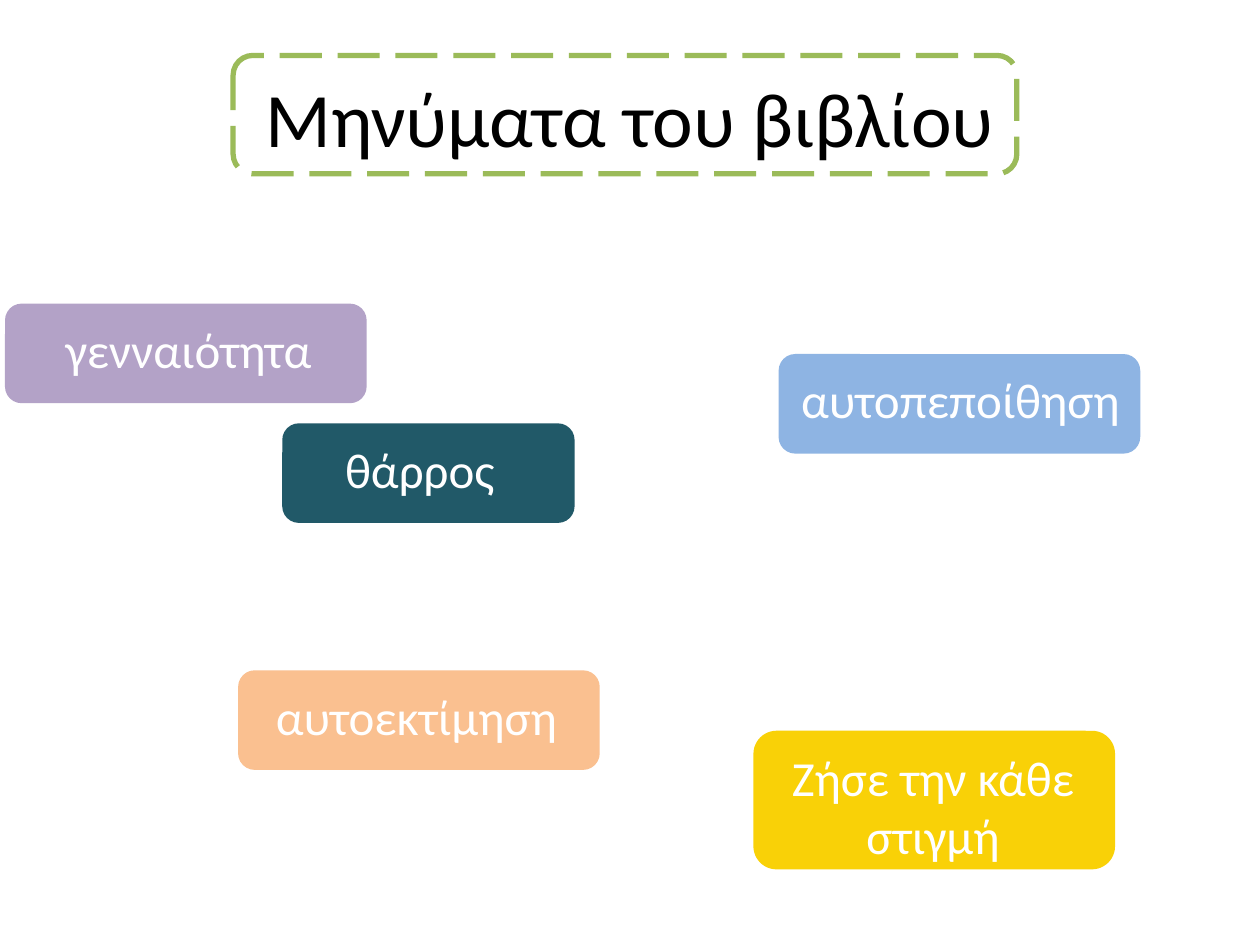
from pptx import Presentation
from pptx.dml.color import RGBColor
from pptx.enum.dml import MSO_LINE
from pptx.enum.shapes import MSO_SHAPE
from pptx.enum.text import MSO_ANCHOR, MSO_AUTO_SIZE, PP_ALIGN
from pptx.util import Inches, Pt

deck = Presentation()
deck.slide_width, deck.slide_height = Inches(10), Inches(7.5)
column, row = deck.slide_width / 100, deck.slide_height / 75
page = deck.slides.add_slide(deck.slide_layouts[5])


def place(left, top, width, height):
    return [int(left * column), int(top * row), int(width * column), int(height * row)]


def write(box, text, size=28, color="FFFFFF", align=PP_ALIGN.LEFT, anchor=MSO_ANCHOR.TOP):
    frame = box.text_frame
    frame.word_wrap = True
    frame.vertical_anchor = anchor
    para = frame.paragraphs[0]
    para.alignment = align
    span = para.add_run()
    span.text = text
    span.font.name = "Calibri"
    span.font.size = Pt(size)
    span.font.color.rgb = RGBColor.from_string(color)


card_width, card_height, line_height = 28.7, 7.9, 5.7
messages = [
    ("Ζήσε την κάθε στιγμή", "F9D107", (59.8, 58, card_width, 11),
     (58.7, 58.8, 30.7, 10.4), PP_ALIGN.CENTER),
    ("αυτοεκτίμηση", "FAC090", (18.9, 53.2, card_width, card_height),
     (20.9, 54, 25.2, line_height), PP_ALIGN.LEFT),
    ("θάρρος", "215968", (22.4, 33.6, 23.2, card_height),
     (26.4, 34.4, 23.6, line_height), PP_ALIGN.LEFT),
    ("αυτοπεποίθηση", "8EB4E3", (61.8, 28.1, card_width, card_height),
     (62.6, 28.8, 29.1, line_height), PP_ALIGN.LEFT),
    ("γενναιότητα", "B3A2C7", (0.4, 24.1, card_width, card_height),
     (0, 24.9, 29.9, line_height), PP_ALIGN.CENTER),
]

for text, color, card_area, text_area, align in messages:
    card = page.shapes.add_shape(MSO_SHAPE.ROUNDED_RECTANGLE, *place(*card_area))
    card.shadow.inherit = False
    card.fill.solid()
    card.fill.fore_color.rgb = RGBColor.from_string(color)
    card.line.fill.background()
    box = page.shapes.add_textbox(*place(*text_area))
    write(box, text, align=align)
    box.text_frame.auto_size = MSO_AUTO_SIZE.SHAPE_TO_FIT_TEXT

title = page.shapes.title
title.left, title.top, title.width, title.height = place(5, 3, 90, 12.5)
write(title, "Μηνύματα του βιβλίου", size=44, color="000000",
      align=PP_ALIGN.CENTER, anchor=MSO_ANCHOR.MIDDLE)

border = page.shapes.add_shape(MSO_SHAPE.ROUNDED_RECTANGLE, *place(18.5, 4.4, 62.2, 9.4))
border.shadow.inherit = False
border.fill.background()
border.line.color.rgb = RGBColor.from_string("9BBB59")
border.line.width = Pt(3)
border.line.dash_style = MSO_LINE.LONG_DASH

deck.save("out.pptx")
